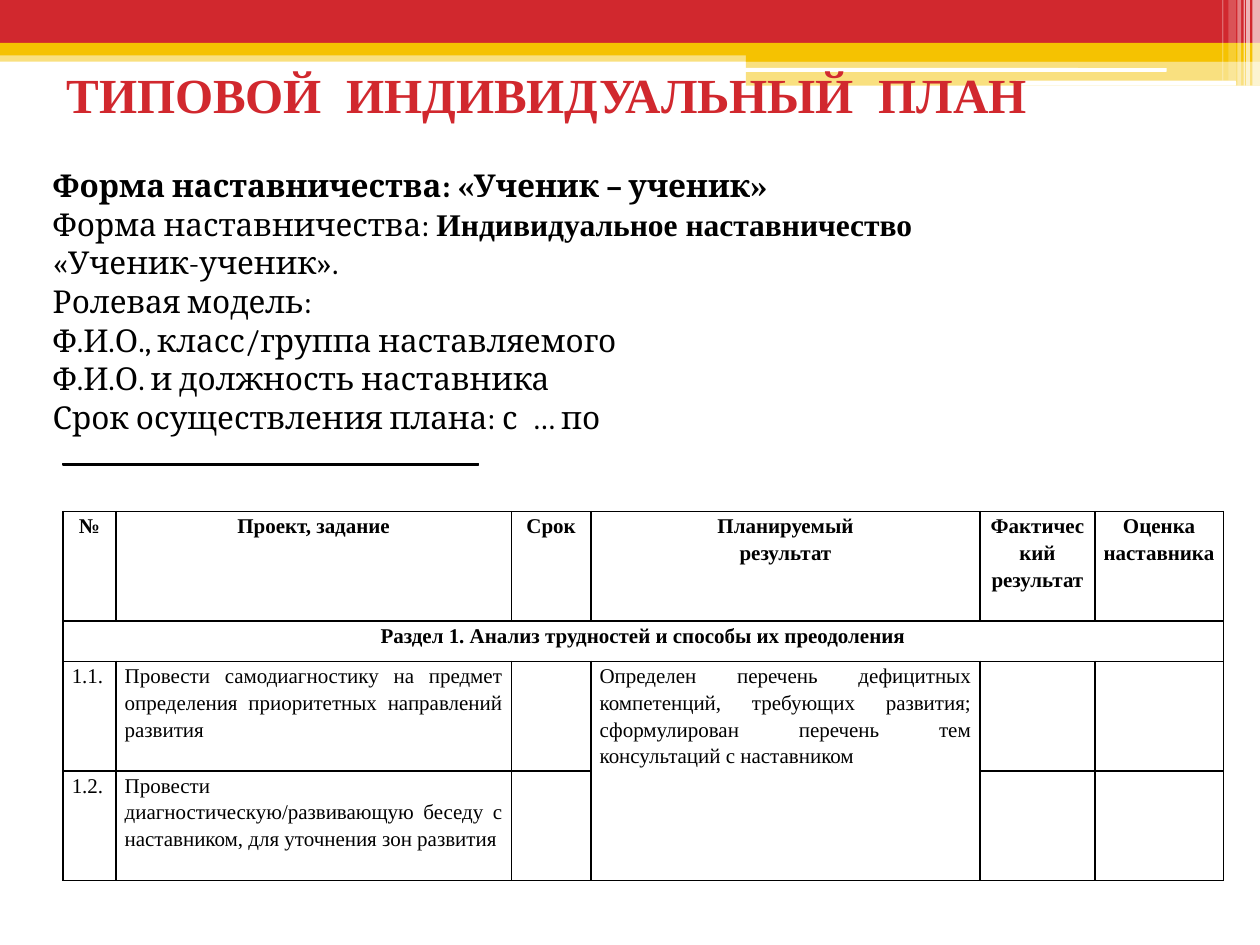
from lxml import etree
from pptx import Presentation
from pptx.dml.color import RGBColor
from pptx.enum.shapes import MSO_SHAPE as SHAPE
from pptx.enum.text import MSO_ANCHOR as ANCHOR, PP_ALIGN as ALIGN
from pptx.oxml.ns import qn
from pptx.util import Inches, Pt

COLORS = {"red": "D1282E", "gold": "F5C201", "white": "FFFFFF", "black": "000000"}
TIMES, CAMBRIA = "Times New Roman", "Cambria"

prs = Presentation()
prs.slide_width, prs.slide_height = Inches(10), Inches(7.5)
s = prs.slides.add_slide(prs.slide_layouts[6])


def add_bar(x, y, w, h, color, alpha=100, kind=SHAPE.RECTANGLE):
    sp = s.shapes.add_shape(kind, Inches(x), Inches(y), Inches(w), Inches(h))
    sp.shadow.inherit = False
    sp.fill.solid()
    sp.fill.fore_color.rgb = RGBColor.from_string(COLORS[color])
    sp.line.fill.background()
    if alpha < 100:
        clr = sp.fill._xPr.find(".//" + qn("a:srgbClr"))
        etree.SubElement(clr, qn("a:alpha")).set("val", str(alpha * 1000))
    return sp


def add_run(p, text, size, font, color="black", bold=False):
    r = p.add_run()
    r.text = text
    r.font.size, r.font.name, r.font.bold = Pt(size), font, bold
    r.font.color.rgb = RGBColor.from_string(COLORS[color])


# Header bands
for band in [
    (0, 0.4, 10, 0.09, "gold", 50),
    (0, 0, 10, 0.34, "red"),
    (0, 0.34, 10, 0.1, "gold"),
    (5.92, 0.39, 4.08, 0.1, "gold"),
    (5.92, 0.48, 4.08, 0.2, "gold", 50),
    (5.91, 0.54, 3.35, 0.03, "white", 100, SHAPE.ROUNDED_RECTANGLE),
    (8.06, 0.64, 1.75, 0.04, "white", 100, SHAPE.ROUNDED_RECTANGLE),
]:
    add_bar(*band)

# Vertical stripes at the right edge
for x, w, h, alpha in [
    (9.94, 0.06, 0.68, 65), (9.89, 0.03, 0.68, 65), (9.87, 0.01, 0.68, 60),
    (9.82, 0.03, 0.68, 40), (9.75, 0.06, 0.64, 20), (9.7, 0.01, 0.64, 30),
]:
    add_bar(x, 0, w, h, "white", alpha)

# Title
tf = s.shapes.add_textbox(Inches(0.43), Inches(0.44), Inches(9), Inches(0.61)).text_frame
tf.word_wrap = True
tf.vertical_anchor = ANCHOR.MIDDLE
add_run(tf.paragraphs[0], "ТИПОВОЙ  ИНДИВИДУАЛЬНЫЙ  ПЛАН", 28, TIMES, "red", True)

# Plan details: each line is a list of (text, font, bold)
details = [
    [("Форма наставничества: «Ученик – ученик»", CAMBRIA, True)],
    [("Форма наставничества: ", CAMBRIA, False),
     ("Индивидуальное наставничество", TIMES, True)],
    [("«Ученик-ученик».", CAMBRIA, False)],
    [("Ролевая модель:", CAMBRIA, False)],
    [("Ф.И.О., класс/группа наставляемого", CAMBRIA, False)],
    [("Ф.И.О. и должность наставника", CAMBRIA, False)],
    [("Срок осуществления плана: с  … по", CAMBRIA, False)],
]
tf = s.shapes.add_textbox(Inches(0.2), Inches(1.31), Inches(9.69), Inches(5.88)).text_frame
tf.word_wrap = True
for i, line in enumerate(details):
    p = tf.add_paragraph() if i else tf.paragraphs[0]
    p.space_before, p.line_spacing = Pt(3), 0.88
    p._p.get_or_add_pPr().set("marL", str(Inches(0.12)))
    for text, font, bold in line:
        add_run(p, text, 18, font, bold=bold)

# Plan table
col_widths = [0.42, 3.14, 0.63, 3.09, 0.91, 1.02]
row_heights = [0.87, 0.32, 0.87, 0.87]
rows = [
    ["№", "Проект, задание", "Срок", "Планируемый\nрезультат",
     "Фактический результат", "Оценка\nнаставника"],
    ["Раздел 1. Анализ трудностей и способы их преодоления", "", "", "", "", ""],
    ["1.1.", "Провести самодиагностику на предмет определения приоритетных "
     "направлений развития ", "",
     "Определен перечень дефицитных компетенций, требующих развития; "
     "сформулирован перечень тем консультаций с наставником", "", ""],
    ["1.2.", "Провести диагностическую/развивающую беседу с наставником, "
     "для уточнения зон развития ", "", "", "", ""],
]
table = s.shapes.add_table(len(rows), len(col_widths), Inches(0.5), Inches(4.06),
                           Inches(sum(col_widths)), Inches(sum(row_heights))).table
table.first_row = table.horz_banding = False
for col, width in zip(table.columns, col_widths):
    col.width = Inches(width)
for row, height in zip(table.rows, row_heights):
    row.height = Inches(height)
table.cell(1, 0).merge(table.cell(1, 5))
table.cell(2, 3).merge(table.cell(3, 3))

for i, texts in enumerate(rows):
    for j, text in enumerate(texts):
        cell = table.cell(i, j)
        cell.margin_left = cell.margin_right = Inches(0.07)
        cell.margin_top = cell.margin_bottom = 0
        # Borders come before the fill in the cell properties
        tcPr = cell._tc.get_or_add_tcPr()
        for side in ("lnL", "lnR", "lnT", "lnB"):
            ln = etree.SubElement(tcPr, qn("a:" + side), w=str(Pt(1)))
            fill = etree.SubElement(ln, qn("a:solidFill"))
            etree.SubElement(fill, qn("a:srgbClr"), val=COLORS["black"])
        cell.fill.background()
        header = i < 2
        for k, part in enumerate(text.split("\n")):
            p = cell.text_frame.add_paragraph() if k else cell.text_frame.paragraphs[0]
            p.line_spacing = 1.15
            p.alignment = ALIGN.CENTER if header else ALIGN.JUSTIFY if j else ALIGN.LEFT
            if part:
                add_run(p, part, 12, TIMES, bold=header)

# Rule under the plan details
rule = add_bar(0.5, 3.68, 3.3, 0.01, "black")
rule.line.color.rgb = RGBColor.from_string(COLORS["black"])
rule.line.width = Pt(0.75)

prs.save("out.pptx")
